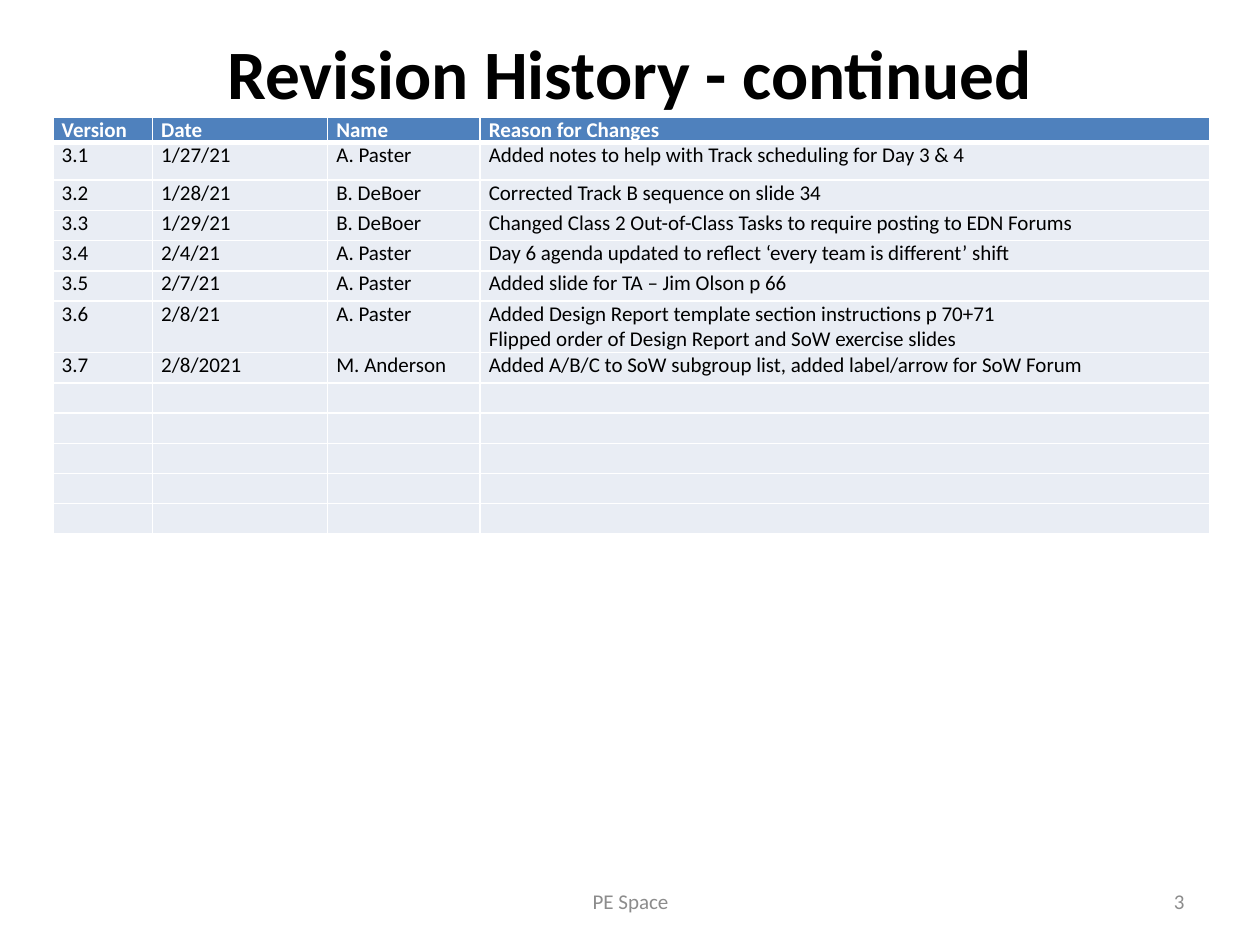
from lxml import etree
from pptx import Presentation, util as u
from pptx.dml.color import RGBColor
from pptx.enum import text as t
from pptx.oxml import ns

BLACK = RGBColor(0x00, 0x00, 0x00)
WHITE = RGBColor(0xFF, 0xFF, 0xFF)
GREY = RGBColor(0x8C, 0x8C, 0x8C)
BLUE = RGBColor(0x4F, 0x81, 0xBD)
PALE = RGBColor(0xE9, 0xED, 0xF4)
FONT = "Calibri"

HEAD = ("Version", "Date", "Name", "Reason for Changes")
LOG = [
    ("3.1", "1/27/21", "A. Paster",
     "Added notes to help with Track scheduling for Day 3 & 4"),
    ("3.2", "1/28/21", "B. DeBoer", "Corrected Track B sequence on slide 34"),
    ("3.3", "1/29/21", "B. DeBoer",
     "Changed Class 2 Out-of-Class Tasks to require posting to EDN Forums"),
    ("3.4", "2/4/21", "A. Paster",
     "Day 6 agenda updated to reflect ‘every team is different’ shift"),
    ("3.5", "2/7/21", "A. Paster", "Added slide for TA – Jim Olson p 66"),
    ("3.6", "2/8/21", "A. Paster",
     "Added Design Report template section instructions p 70+71\n"
     "Flipped order of Design Report and SoW exercise slides"),
    ("3.7", "2/8/2021", "M. Anderson",
     "Added A/B/C to SoW subgroup list, added label/arrow for SoW Forum"),
]
SPARE = 5
COLS = (0.79, 1.39, 1.21, 5.79)
ROW = 0.24
TALL = {0: 0.2, 1: 0.3, 6: 0.41}


def style(para, size, color, bold=False):
    for run in para.runs:
        font = run.font
        font.name, font.size, font.bold = FONT, u.Pt(size), bold
        font.color.rgb = color


def add_label(slide, box, words, size, color, align, bold=False):
    shape = slide.shapes.add_textbox(*map(u.Inches, box))
    frame = shape.text_frame
    frame.word_wrap = True
    frame.vertical_anchor = t.MSO_ANCHOR.MIDDLE
    frame.text = words
    para = frame.paragraphs[0]
    para.alignment = align
    style(para, size, color, bold)
    return frame


def add_title(slide, box):
    frame = add_label(slide, box, "Revision History - continued", 39.6,
                      BLACK, t.PP_ALIGN.CENTER, True)
    frame.vertical_anchor = t.MSO_ANCHOR.TOP
    frame.margin_top = 0
    frame.paragraphs[0].line_spacing = 0.93


def add_edges(cell, top, bottom):
    """Draw white cell borders; top and bottom are widths in points."""
    props = cell._tc.get_or_add_tcPr()
    for side, width in (("L", 1), ("R", 1), ("T", top), ("B", bottom)):
        line = etree.SubElement(props, ns.qn(f"a:ln{side}"), w=str(u.Pt(width)))
        fill = etree.SubElement(line, ns.qn("a:solidFill"))
        etree.SubElement(fill, ns.qn("a:srgbClr"), val=str(WHITE))


def fill_cell(cell, words, row):
    head = row == 0
    add_edges(cell, 3 if row == 1 else 1, 3 if head else 1)
    cell.fill.solid()
    cell.fill.fore_color.rgb = BLUE if head else PALE
    cell.margin_left = cell.margin_right = u.Inches(0.07)
    cell.margin_top = cell.margin_bottom = 0
    cell.text_frame.text = words
    for para in cell.text_frame.paragraphs:
        style(para, 12, WHITE if head else BLACK, head)
        if not words:  # keeps an empty row from growing to the default size
            etree.SubElement(para._p, ns.qn("a:endParaRPr"), sz="1200")


def add_log(slide, box):
    rows = [HEAD] + LOG + [("",) * len(HEAD)] * SPARE
    frame = slide.shapes.add_table(len(rows), len(HEAD), *map(u.Inches, box))
    table = frame.table
    for col, width in zip(table.columns, COLS):
        col.width = u.Inches(width)
    for r, row in enumerate(rows):
        table.rows[r].height = u.Inches(TALL.get(r, ROW))
        for c, words in enumerate(row):
            fill_cell(table.cell(r, c), words, r)


def add_footer(slide, top):
    add_label(slide, (3.42, top, 3.17, 0.4), "PE Space", 12, GREY,
              t.PP_ALIGN.CENTER)
    add_label(slide, (7.17, top, 2.33, 0.4), "3", 12, GREY, t.PP_ALIGN.RIGHT)


def main():
    deck = Presentation()
    deck.slide_width, deck.slide_height = u.Inches(10), u.Inches(7.5)
    slide = deck.slides.add_slide(deck.slide_layouts[6])
    add_title(slide, (0.5, 0.3, 9, 1.25))
    add_log(slide, (0.42, 0.93, 9.18, 3.33))
    add_footer(slide, 6.95)
    deck.save("out.pptx")


if __name__ == "__main__":
    main()
